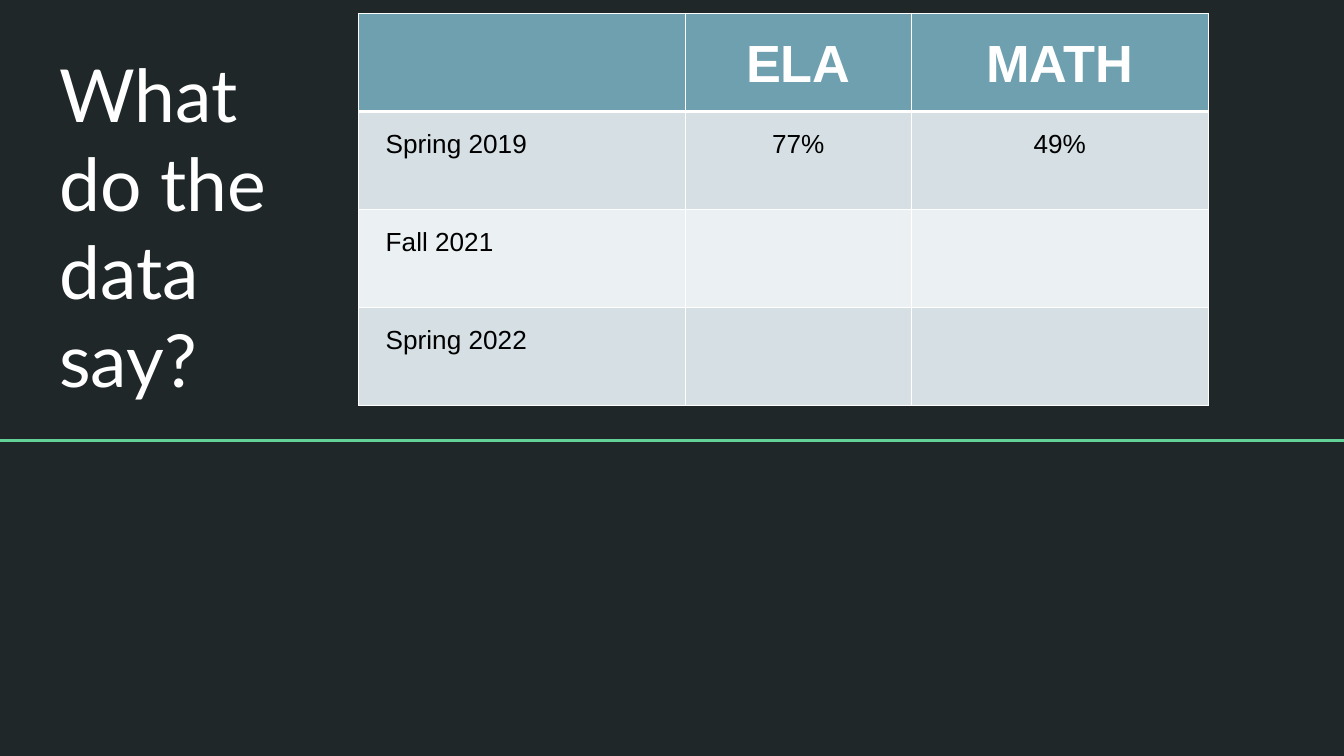
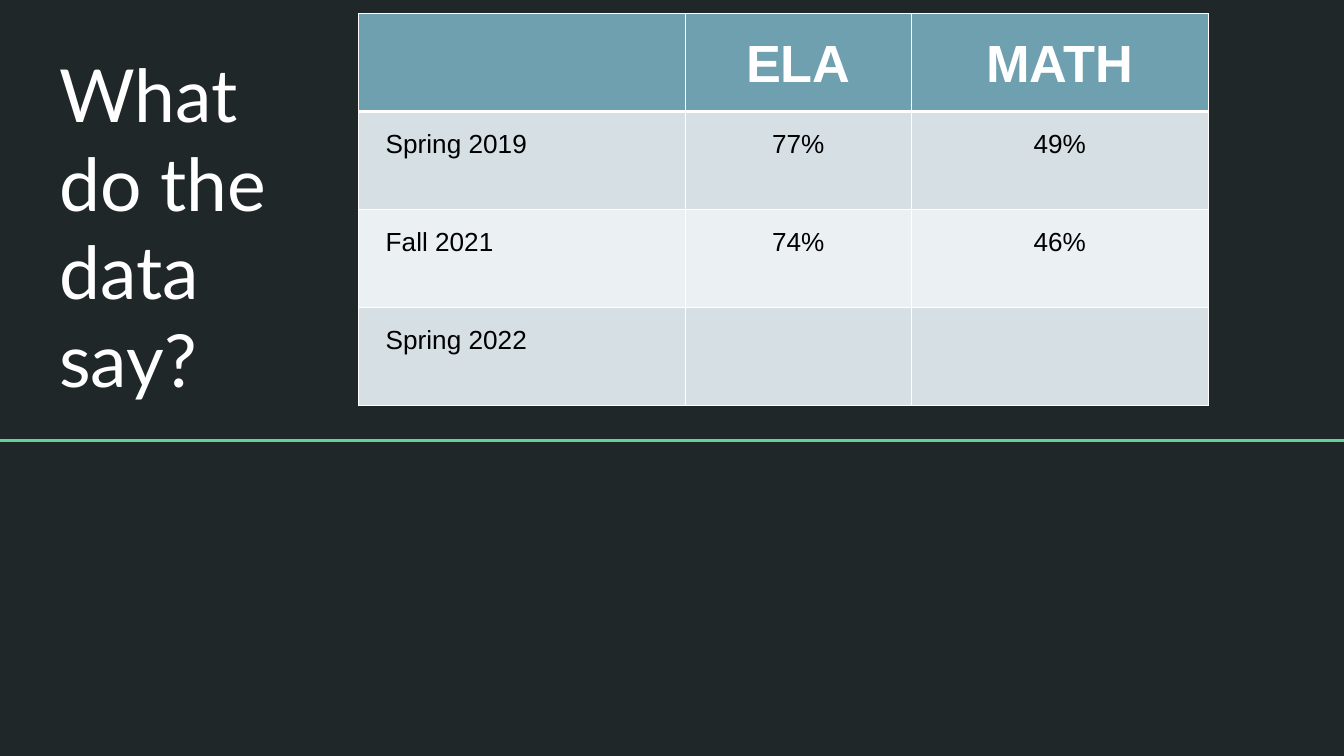
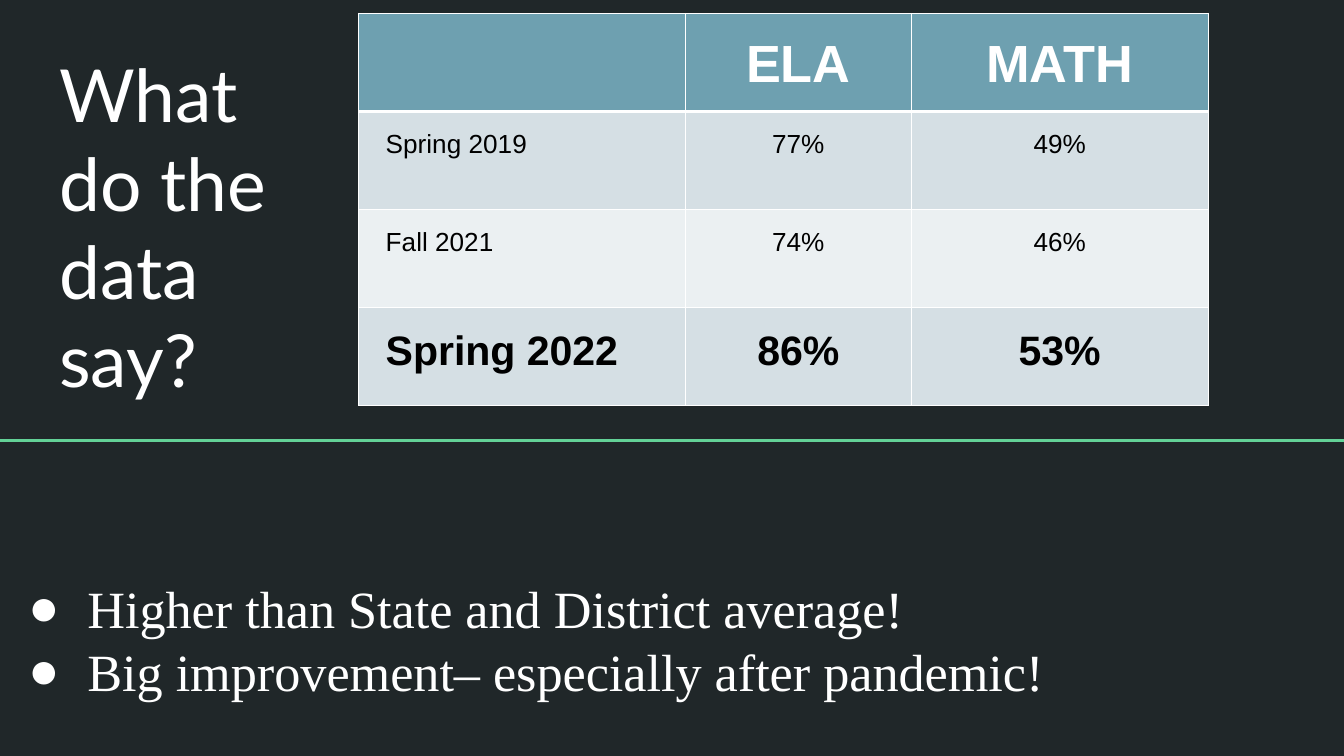
from lxml.etree import SubElement
from pptx import Presentation
from pptx.dml.color import RGBColor
from pptx.enum.shapes import MSO_CONNECTOR
from pptx.enum.text import MSO_ANCHOR, MSO_AUTO_SIZE, PP_ALIGN
from pptx.oxml.ns import qn
from pptx.util import Inches, Pt

BACKGROUND = RGBColor(0x20, 0x27, 0x29)
RULE = RGBColor(0x63, 0xD2, 0x97)
HEADER = RGBColor(0x6E, 0xA0, 0xB0)
BAND_DARK = RGBColor(0xD5, 0xDF, 0xE4)
BAND_LIGHT = RGBColor(0xEB, 0xF0, 0xF2)
WHITE = RGBColor(0xFF, 0xFF, 0xFF)
BLACK = RGBColor(0x00, 0x00, 0x00)

TITLE = [("What", 39.2), (" ", 43.2), ("do the data say?", 39.2)]
SUBJECTS = ["", "ELA", "MATH"]
SCORES = [
    ("Spring 2019", "77%", "49%"),
    ("Fall 2021", "74%", "46%"),
    ("Spring 2022", "86%", "53%"),
]
FINDINGS = [
    "Higher than State and District average!",
    "Big improvement– especially after pandemic!",
]

SLIDE_WIDTH = Inches(10)
SLIDE_HEIGHT = SLIDE_WIDTH * 9 // 16
TITLE_BOX = (0.34, 0.1, 2.27, 2.99)
FINDINGS_BOX = (0.05, 4.05, 9.92, 1.41)
TABLE_LEFT, TABLE_TOP = 2.67, 0.1
COLUMN_WIDTHS = [2.43, 1.68, 2.21]
ROW_HEIGHT = 0.73
RULE_Y = 3.28
INSET = 0.1
MARGINS = {f"margin_{side}": Inches(INSET) for side in ("left", "top", "right", "bottom")}
THIN, THICK = 0.75, 1.5

HEADER_TEXT = {"name": "Arial", "size": Pt(28), "bold": True}
SCORE_TEXT = {"name": "Arial", "size": Pt(14), "bold": False}
LATEST_TEXT = {"name": "Arial", "size": Pt(22), "bold": True}
FINDING_TEXT = {"name": "Times New Roman", "size": Pt(28), "bold": False}


def set_attrs(obj, values):
    for name, value in values.items():
        setattr(obj, name, value)


def add_run(p, text, color, font):
    r = p.add_run()
    r.text = text
    set_attrs(r.font, font)
    r.font.color.rgb = color


def indent(p, left, right=0, first=0):
    pPr = p._p.get_or_add_pPr()
    for name, value in (("marL", left), ("marR", right), ("indent", first)):
        pPr.set(name, str(Inches(value)))
    return pPr


def add_color(parent, color):
    SubElement(parent, qn("a:srgbClr"), val=str(color))


def place_text(sp, box, anchor):
    """Move a placeholder to box and return its text frame, ready to fill."""
    set_attrs(sp, dict(zip(("left", "top", "width", "height"), map(Inches, box))))
    tf = sp.text_frame
    set_attrs(tf, {"word_wrap": True, "auto_size": MSO_AUTO_SIZE.NONE,
                   "vertical_anchor": anchor, **MARGINS})
    return tf


def add_rule(slide):
    y = Inches(RULE_Y)
    line = slide.shapes.add_connector(MSO_CONNECTOR.STRAIGHT, 0, y, SLIDE_WIDTH, y)
    line.line.color.rgb = RULE
    line.line.width = Pt(1.5)
    SubElement(line._element.spPr, qn("a:effectLst"))


def add_title(slide):
    p = place_text(slide.shapes.title, TITLE_BOX, MSO_ANCHOR.BOTTOM).paragraphs[0]
    p.alignment = PP_ALIGN.LEFT
    for text, size in TITLE:
        add_run(p, text, WHITE, {"name": "Lato", "size": Pt(size)})


def border_cell(cell, row):
    tcPr = cell._tc.get_or_add_tcPr()
    widths = {"L": THIN, "R": THIN,
              "T": THICK if row == 1 else THIN,
              "B": THICK if row == 0 else THIN}
    for side, width in widths.items():
        ln = SubElement(tcPr, qn(f"a:ln{side}"), w=str(Pt(width)))
        add_color(SubElement(ln, qn("a:solidFill")), WHITE)


def fill_cell(cell, text, row, col, font):
    border_cell(cell, row)
    cell.fill.solid()
    cell.fill.fore_color.rgb = HEADER if row == 0 else BAND_DARK if row % 2 else BAND_LIGHT
    set_attrs(cell, MARGINS)
    if not text:
        return
    p = cell.text_frame.paragraphs[0]
    set_attrs(p, {"alignment": PP_ALIGN.CENTER if col else PP_ALIGN.LEFT,
                  "line_spacing": 1.15, "space_before": Pt(12), "space_after": Pt(12)})
    indent(p, 0.1, right=0.1)
    add_run(p, text, BLACK if row else WHITE, font)


def add_scores(slide, shown):
    """Add the score table with the results of the first `shown` terms."""
    rows = [SUBJECTS] + [
        score if i < shown else (score[0], "", "") for i, score in enumerate(SCORES)
    ]
    table = slide.shapes.add_table(
        len(rows), len(SUBJECTS), Inches(TABLE_LEFT), Inches(TABLE_TOP),
        Inches(sum(COLUMN_WIDTHS)), Inches(ROW_HEIGHT * len(rows))).table
    table.horz_banding = False
    for column, width in zip(table.columns, COLUMN_WIDTHS):
        column.width = Inches(width)
    for i, row in enumerate(rows):
        table.rows[i].height = Inches(ROW_HEIGHT)
        latest = i == shown == len(SCORES)
        font = HEADER_TEXT if i == 0 else LATEST_TEXT if latest else SCORE_TEXT
        for j, text in enumerate(row):
            fill_cell(table.cell(i, j), text, i, j, font)


def add_findings(slide):
    tf = place_text(slide.placeholders[1], FINDINGS_BOX, MSO_ANCHOR.MIDDLE)
    for i, finding in enumerate(FINDINGS):
        p = tf.add_paragraph() if i else tf.paragraphs[0]
        set_attrs(p, {"alignment": PP_ALIGN.LEFT, "space_before": Pt(0)})
        pPr = indent(p, 0.5, first=-0.44)
        add_color(SubElement(pPr, qn("a:buClr")), WHITE)
        SubElement(pPr, qn("a:buChar"), char="●")
        add_run(p, finding, WHITE, FINDING_TEXT)


def main():
    prs = Presentation()
    prs.slide_width, prs.slide_height = SLIDE_WIDTH, SLIDE_HEIGHT
    fill = prs.slide_master.background.fill
    fill.solid()
    fill.fore_color.rgb = BACKGROUND
    title_and_content, title_only = prs.slide_layouts[1], prs.slide_layouts[5]

    for shown in range(1, len(SCORES) + 1):
        complete = shown == len(SCORES)
        slide = prs.slides.add_slide(title_and_content if complete else title_only)
        add_rule(slide)
        add_title(slide)
        add_scores(slide, shown)
        if complete:
            add_findings(slide)
    prs.save("out.pptx")


if __name__ == "__main__":
    main()
